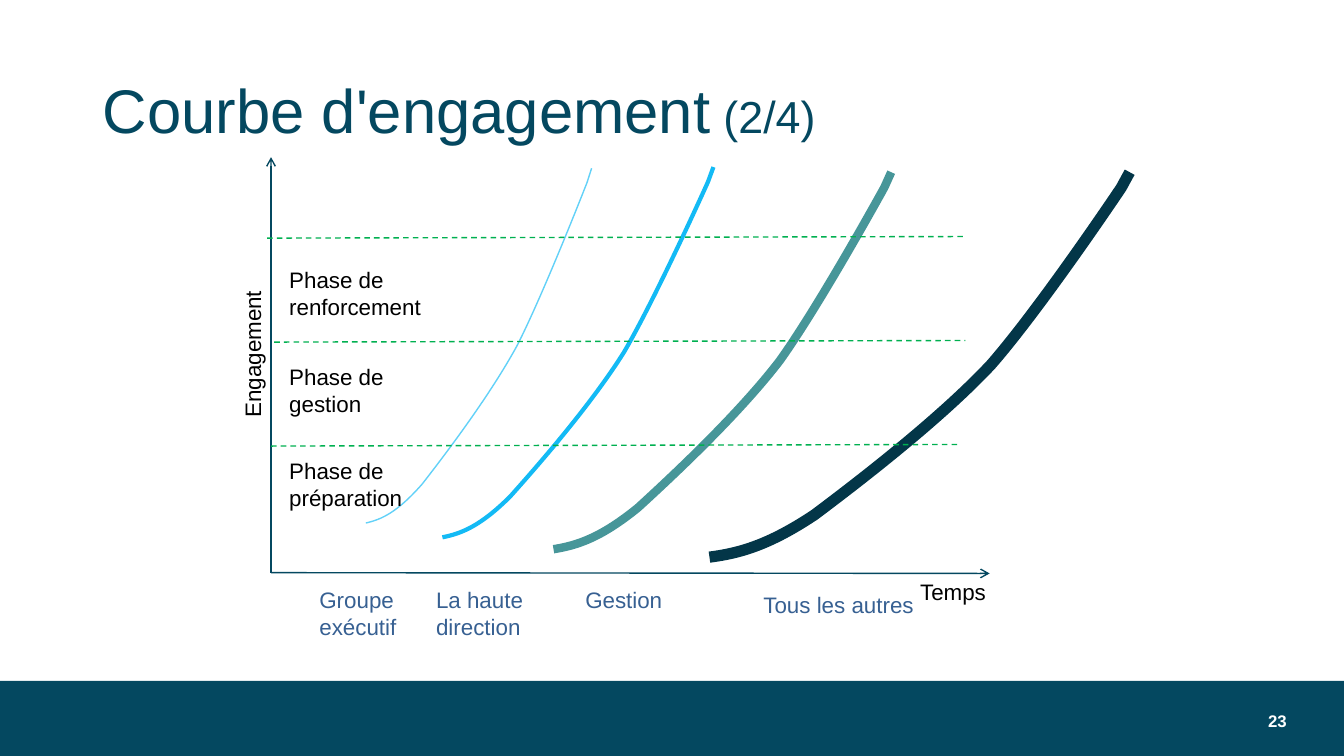
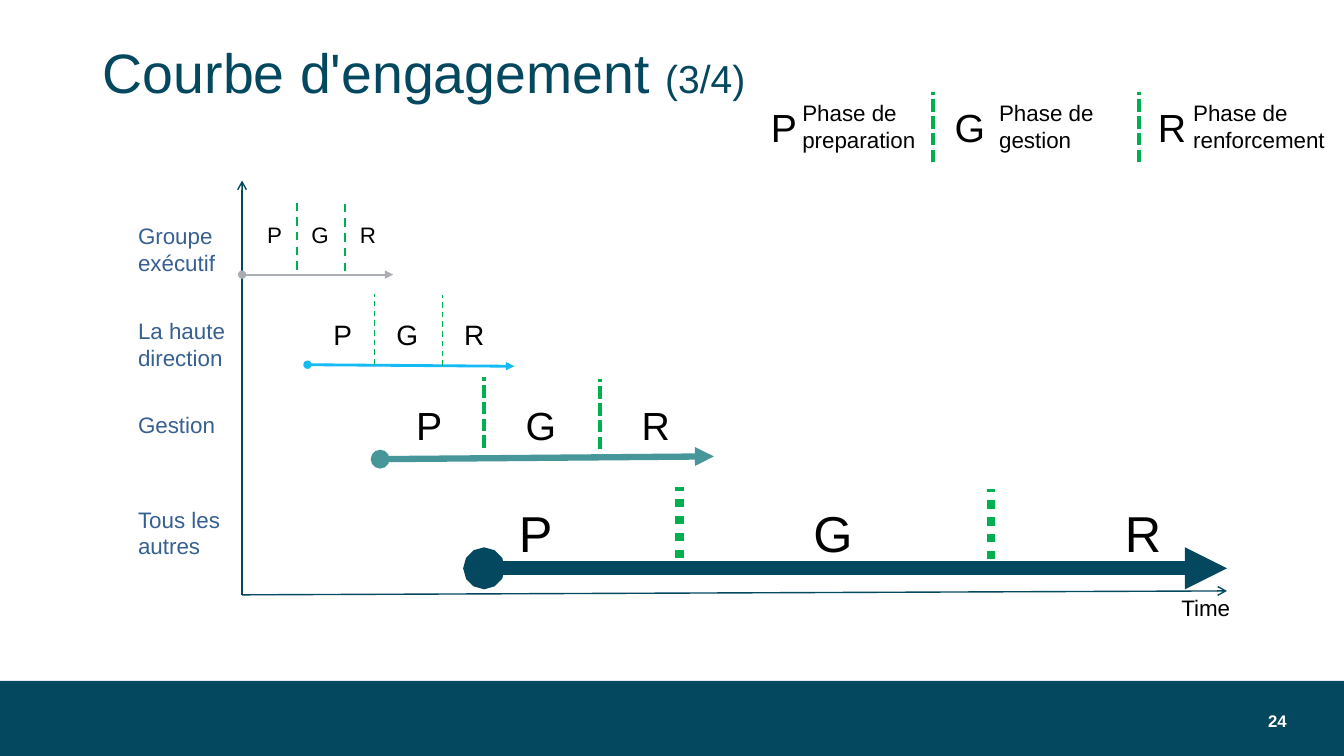
from lxml import etree
from pptx import Presentation
from pptx import util as u
from pptx.dml.color import RGBColor
from pptx.enum import dml, shapes, text
from pptx.oxml import ns

FONT = "Arial"
NAVY, DEEP, TEAL, AZURE, SKY = "044860", "033648", "479699", "13BAF5", "62D1F8"
GREEN, GREY, LABEL, BLACK, WHITE = "00B050", "AAADB1", "376092", "000000", "FFFFFF"
SLIDE_WIDTH, SLIDE_HEIGHT = 33.87, 19.05
BAND_TOP = 17.16
DIVIDER_HEIGHT = 1.78
LETTERS = "PGR"
DASH = dml.MSO_LINE.DASH
SHORT_DASH = dml.MSO_LINE.SQUARE_DOT
DOT = dml.MSO_LINE.ROUND_DOT

CURVE_START = (0, 1)
CURVE_CONTROLS = [
    (0.07, 0.99), (0.14, 0.97), (0.25, 0.89),
    (0.36, 0.8), (0.55, 0.64), (0.67, 0.5),
    (0.79, 0.35), (0.98, 0.04), (0.98, 0.04),
]
CURVE_END = (1, 0)


def set_colour(target, colour):
    target.rgb = RGBColor.from_string(colour)


def set_outline(shape, colour, weight):
    shape.line.fill.solid()
    set_colour(shape.line.color, colour)
    shape.line.width = u.Pt(weight)


def format_span(span, size, colour, bold=False):
    span.font.name = FONT
    span.font.size = u.Pt(size)
    span.font.bold = bold
    set_colour(span.font.color, colour)


def add_label(page, left, top, width, words, colour=BLACK, size=16, lines=1):
    height = 0.26 + 0.043 * size * lines
    box = page.shapes.add_textbox(u.Cm(left), u.Cm(top), u.Cm(width), u.Cm(height))
    box.text_frame.word_wrap = lines > 1
    box.text_frame.auto_size = text.MSO_AUTO_SIZE.SHAPE_TO_FIT_TEXT
    box.text_frame.text = words
    format_span(box.text_frame.paragraphs[0].runs[0], size, colour)
    return box


def add_letter(page, left, top, letter, size):
    width = 0.58 + 0.025 * size if letter == "G" else 0.53 + 0.018 * size
    add_label(page, left, top, width, letter, size=size)


def add_line(page, start, end, colour, weight, dash=None, head=None, tail=None):
    line = page.shapes.add_connector(
        shapes.MSO_CONNECTOR.STRAIGHT, *[u.Cm(value) for value in (*start, *end)]
    )
    set_outline(line, colour, weight)
    if dash is not None:
        line.line.dash_style = dash
    outline = line.get_or_add_ln()
    for tag, kind in (("a:headEnd", head), ("a:tailEnd", tail)):
        if kind:
            etree.SubElement(outline, ns.qn(tag)).set("type", kind)
    etree.SubElement(line.element.spPr, ns.qn("a:effectLst"))


def add_divider(page, left, top, weight, dash):
    add_line(page, (left, top + DIVIDER_HEIGHT), (left, top), GREEN, weight, dash)


def bend_segments(curve):
    segments = list(curve.element.iter(ns.qn("a:lnTo")))
    for first in range(0, len(CURVE_CONTROLS), 3):
        bend, *others = segments[first:first + 3]
        bend.tag = ns.qn("a:cubicBezTo")
        for other in others:
            bend.append(other[0])
            other.getparent().remove(other)


def add_curve(page, left, top, width, height, colour, weight):
    points = [
        (u.Cm(left + x * width), u.Cm(top + y * height))
        for x, y in (CURVE_START, *CURVE_CONTROLS, CURVE_END)
    ]
    builder = page.shapes.build_freeform(*points[0])
    builder.add_line_segments(points[1:], close=False)
    curve = builder.convert_to_shape()
    bend_segments(curve)
    curve.shadow.inherit = False
    curve.fill.background()
    set_outline(curve, colour, weight)


def add_axes(page, left, top, width, height, drift):
    origin = (left, top + height)
    add_line(page, (left, top), origin, NAVY, 1, head="arrow")
    add_line(page, origin, (left + width, top + height + drift), NAVY, 1, tail="arrow")


def add_band(deck, page):
    band = page.shapes.add_shape(
        shapes.MSO_SHAPE.RECTANGLE, 0, u.Cm(BAND_TOP),
        u.Cm(SLIDE_WIDTH), u.Cm(SLIDE_HEIGHT - BAND_TOP),
    )
    band.shadow.inherit = False
    band.fill.solid()
    set_colour(band.fill.fore_color, NAVY)
    band.line.fill.background()
    deck.slide_master.shapes.element.insert(2, band.element)


def add_page(deck, number, title_box, spans):
    page = deck.slides.add_slide(deck.slide_layouts[5])
    title = page.shapes.title
    title.left, title.top, title.width, title.height = [u.Cm(v) for v in title_box]
    title.text_frame.auto_size = text.MSO_AUTO_SIZE.NONE
    title.text_frame.vertical_anchor = text.MSO_ANCHOR.MIDDLE
    para = title.text_frame.paragraphs[0]
    para.alignment = text.PP_ALIGN.LEFT
    para.line_spacing = 0.9
    for words, size in spans:
        span = para.add_run()
        span.text = words
        format_span(span, size, NAVY)
    box = add_label(page, 31.52, 17.78, 1.35, str(number), WHITE, 12)
    para = box.text_frame.paragraphs[0]
    para.alignment = text.PP_ALIGN.CENTER
    para.runs[0].font.bold = True
    return page


def draw_curve_chart(page, left, top, width, height):
    chart = page.shapes.add_group_shape()
    add_axes(chart, left, top, width, height, 0.02)
    curves = [
        (2.39, 0.28, 5.69, 8.94, SKY, 1),
        (4.32, 0.25, 6.83, 9.33, AZURE, 3),
        (7.12, 0.38, 8.51, 9.5, TEAL, 6),
        (11.05, 0.38, 10.59, 9.7, DEEP, 8),
    ]
    for x, y, curve_width, curve_height, colour, weight in curves:
        add_curve(chart, left + x, top + y, curve_width, curve_height, colour, weight)

    for row, (start, end) in enumerate([(-0.1, 17.5), (0.08, 17.5), (0, 17.32)]):
        y = top + 2.04 + 2.62 * row
        add_line(chart, (left + start, y), (left + end, y - 0.04), GREEN, 1, DASH)

    phases = [(2.62, "renforcement"), (5.07, "gestion"), (7.43, "préparation")]
    for y, phase in phases:
        add_label(chart, left + 0.21, top + y, 4.11, "Phase de " + phase, lines=2)

    groups = [
        (0.97, 10.69, 2.97, "Groupe exécutif", 2),
        (3.91, 10.69, 3.2, "La haute direction", 2),
        (7.67, 10.69, 2.49, "Gestion", 1),
        (12.16, 10.8, 4.37, "Tous les autres", 1),
    ]
    for x, y, label_width, words, lines in groups:
        add_label(chart, left + x, top + y, label_width, words, LABEL, lines=lines)

    add_label(chart, left - 2.33, top + 4.47, 3.73, "Engagement").rotation = 270
    add_label(chart, left + 16.11, top + 10.49, 2.36, "Temps")


def draw_legend(page, left, top):
    entries = [
        (0, 0.79, "preparation"), (4.63, 5.75, "gestion"), (9.75, 10.64, "renforcement"),
    ]
    for letter, (letter_x, phase_x, phase) in zip(LETTERS, entries):
        add_letter(page, left + letter_x, top + 0.17, letter, 28)
        add_label(page, left + phase_x, top + 0.07, 4.01, "Phase de " + phase, lines=2)
    for x in (4.33, 9.53):
        add_divider(page, left + x, top, 3, SHORT_DASH)


def draw_lane(page, left, top, width, drift, arrow, divider, letters):
    lane = page.shapes.add_group_shape()
    colour, weight = arrow
    add_line(lane, (left, top), (left + width, top + drift), colour, weight,
             head="oval", tail="triangle")
    rise, divider_weight, dash, offsets = divider
    for index, x in enumerate(offsets):
        add_divider(lane, left + x, top - rise + 0.03 * index, divider_weight, dash)
    rise, size, offsets = letters
    for letter, x in zip(LETTERS, offsets):
        add_letter(lane, left + x, top - rise, letter, size)


def draw_lane_chart(page, left, top, width, height):
    add_axes(page, left, top, width, height, -0.1)
    groups = [
        (2.97, "Groupe exécutif", 2), (3.35, "La haute direction", 2),
        (2.49, "Gestion", 1), (3.1, "Tous les autres", 2),
    ]
    for row, (label_width, words, lines) in enumerate(groups):
        add_label(page, left - 2.87, top + 0.93 + 2.38 * row, label_width, words,
                  LABEL, lines=lines)

    lanes = [
        (0, 2.37, 3.81, 0, (GREY, 1.5),
         (1.9, 1.5, DASH, (1.38, 2.59)), (1.46, 16, (0.38, 1.5, 2.72))),
        (1.65, 4.64, 5.21, 0.04, (AZURE, 2),
         (1.78, 1, DASH, (1.69, 3.4)), (1.31, 20, (0.4, 1.99, 3.7))),
        (3.48, 7.02, 8.41, -0.07, (TEAL, 4.5),
         (2.06, 3, SHORT_DASH, (2.62, 5.55)), (1.59, 28, (0.66, 3.42, 6.34))),
        (6.1, 9.77, 18.72, 0, (NAVY, 10),
         (2.04, 6, DOT, (4.92, 12.78)), (1.79, 36, (0.63, 8.05, 15.9))),
    ]
    for x, y, *lane in lanes:
        draw_lane(page, left + x, top + y, *lane)
    add_label(page, left + 23.42, top + 10.29, 1.78, "Time")


def main():
    deck = Presentation()
    deck.slide_width, deck.slide_height = u.Cm(SLIDE_WIDTH), u.Cm(SLIDE_HEIGHT)

    page = add_page(deck, 23, (2.34, 1.02, 30.56, 3.68),
                    [("Courbe d'engagement", 44), (" (2/4)", 32)])
    add_band(deck, page)
    draw_curve_chart(page, 6.83, 3.96, 18.11, 10.47)

    page = add_page(deck, 24, (2.34, 1.02, 17.91, 1.75),
                    [("Courbe d'engagement ", 39.6), ("(3/4)", 27.9)])
    draw_legend(page, 19.18, 2.31)
    draw_lane_chart(page, 6.1, 4.55, 24.82, 10.44)

    deck.save("out.pptx")


if __name__ == "__main__":
    main()
